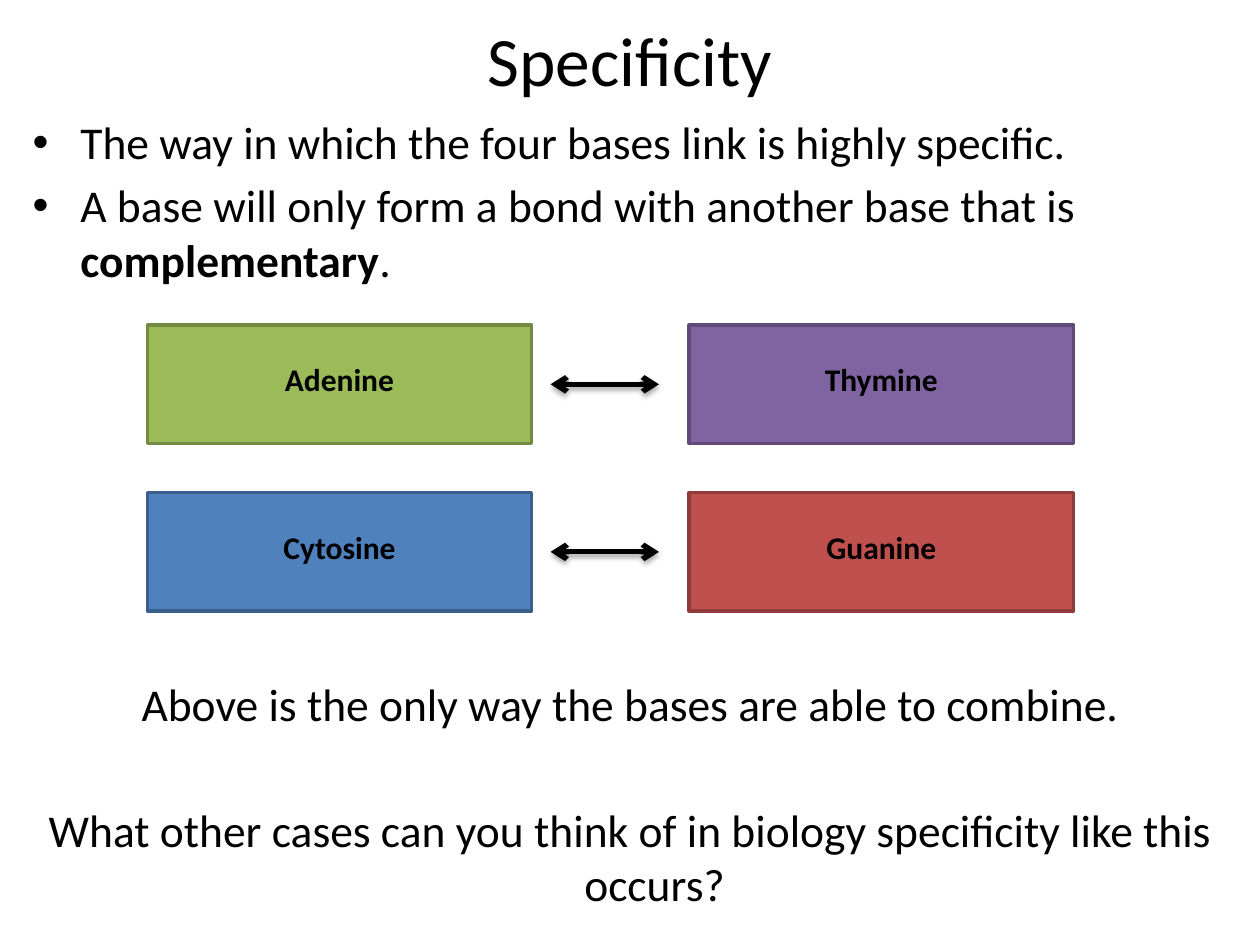
from dataclasses import dataclass

from lxml.etree import SubElement as Sub
from pptx import Presentation
from pptx.dml.color import RGBColor as Rgb
from pptx.enum.shapes import MSO_CONNECTOR as Conn, MSO_SHAPE as Kind
from pptx.enum.text import MSO_ANCHOR as Anchor, PP_ALIGN as Align
from pptx.oxml.ns import qn
from pptx.util import Inches, Pt

FONT = "Calibri"
COLORS = {
    "ink": "000000",
    "green": "9BBB59", "green edge": "738A42",
    "purple": "8064A2", "purple edge": "5F4A78",
    "blue": "4F81BD", "blue edge": "3A5F8C",
    "red": "C0504D", "red edge": "8E3B39",
}


@dataclass
class Base:
    name: str
    color: str


@dataclass
class Para:
    words: list[str]
    gap: float = 4.6
    bullet: bool = False


PAIRS = [
    (Base("Adenine", "green"), Base("Thymine", "purple")),
    (Base("Cytosine", "blue"), Base("Guanine", "red")),
]
PARAS = [
    Para(["The way in which the four bases link is highly specific."], bullet=True),
    Para(["A base will only form a bond with another base that is ",
          "complementary", "."], bullet=True),
    Para(["Above is the only way the bases are able to combine."], 222.5),
    Para(["What other cases can you think of in biology specificity "
          "like this occurs?"], 41),
]
LEFTS = (1.17, 5.47)
TOP, STEP = 2.58, 1.33
WIDE, HIGH = 3.05, 0.94


def rgb(key: str) -> Rgb:
    return Rgb.from_string(COLORS[key])


def style(run, size: float, bold: bool = False) -> None:
    run.font.name = FONT
    run.font.size = Pt(size)
    run.font.bold = bold
    run.font.color.rgb = rgb("ink")


def add_box(slide, left: float, top: float, wide: float, high: float):
    box = slide.shapes.add_textbox(Inches(left), Inches(top), Inches(wide), Inches(high))
    box.text_frame.word_wrap = True
    return box.text_frame


def add_label(slide, text: str, size: float, bold: bool, *area: float) -> None:
    frame = add_box(slide, *area)
    frame.text = text
    frame.vertical_anchor = Anchor.MIDDLE
    para = frame.paragraphs[0]
    para.alignment = Align.CENTER
    style(para.runs[0], size, bold)


def add_body(slide) -> None:
    frame = add_box(slide, 0.16, 0.86, 9.69, 6.64)
    for i, item in enumerate(PARAS):
        para = frame.add_paragraph() if i else frame.paragraphs[0]
        para.alignment = Align.LEFT if item.bullet else Align.CENTER
        para.space_before = Pt(item.gap)
        for word in item.words:
            run = para.add_run()
            run.text = word
            style(run, 26, word == "complementary")
        props = para._p.get_or_add_pPr()
        props.set("marL", str(Inches(0.38)))
        props.set("indent", str(Inches(-0.38)))
        if item.bullet:
            Sub(props, qn("a:buFont"), typeface="Arial")
            Sub(props, qn("a:buChar"), char="•")
        else:
            Sub(props, qn("a:buNone"))


def add_base(slide, base: Base, left: float, top: float) -> None:
    rect = slide.shapes.add_shape(
        Kind.RECTANGLE, Inches(left), Inches(top), Inches(WIDE), Inches(HIGH))
    rect.shadow.inherit = False
    rect.fill.solid()
    rect.fill.fore_color.rgb = rgb(base.color)
    rect.line.color.rgb = rgb(base.color + " edge")
    rect.line.width = Pt(2)
    add_label(slide, base.name, 18, True, left + 0.16, top + 0.23, 2.73, 0.4)


def add_arrow(slide, y: float) -> None:
    link = slide.shapes.add_connector(
        Conn.STRAIGHT, Inches(4.37), Inches(y), Inches(5.23), Inches(y))
    link.line.color.rgb = rgb("ink")
    link.line.width = Pt(3)
    line = link.line._get_or_add_ln()
    for end in ("a:headEnd", "a:tailEnd"):
        Sub(line, qn(end), type="arrow")
    effects = Sub(link._element.spPr, qn("a:effectLst"))
    shade = Sub(effects, qn("a:outerShdw"), blurRad=str(Pt(3.1)),
                dist=str(Pt(1.8)), dir="5400000", rotWithShape="0")
    tint = Sub(shade, qn("a:srgbClr"), val=COLORS["ink"])
    Sub(tint, qn("a:alpha"), val="35000")


def main() -> None:
    deck = Presentation()
    deck.slide_width, deck.slide_height = Inches(10), Inches(7.5)
    slide = deck.slides.add_slide(deck.slide_layouts[6])
    add_label(slide, "Specificity", 39.6, False, 0.5, 0.23, 9, 0.47)
    add_body(slide)
    for row, pair in enumerate(PAIRS):
        top = TOP + row * STEP
        for base, left in zip(pair, LEFTS):
            add_base(slide, base, left, top)
        add_arrow(slide, top + HIGH / 2)
    deck.save("out.pptx")


if __name__ == "__main__":
    main()
